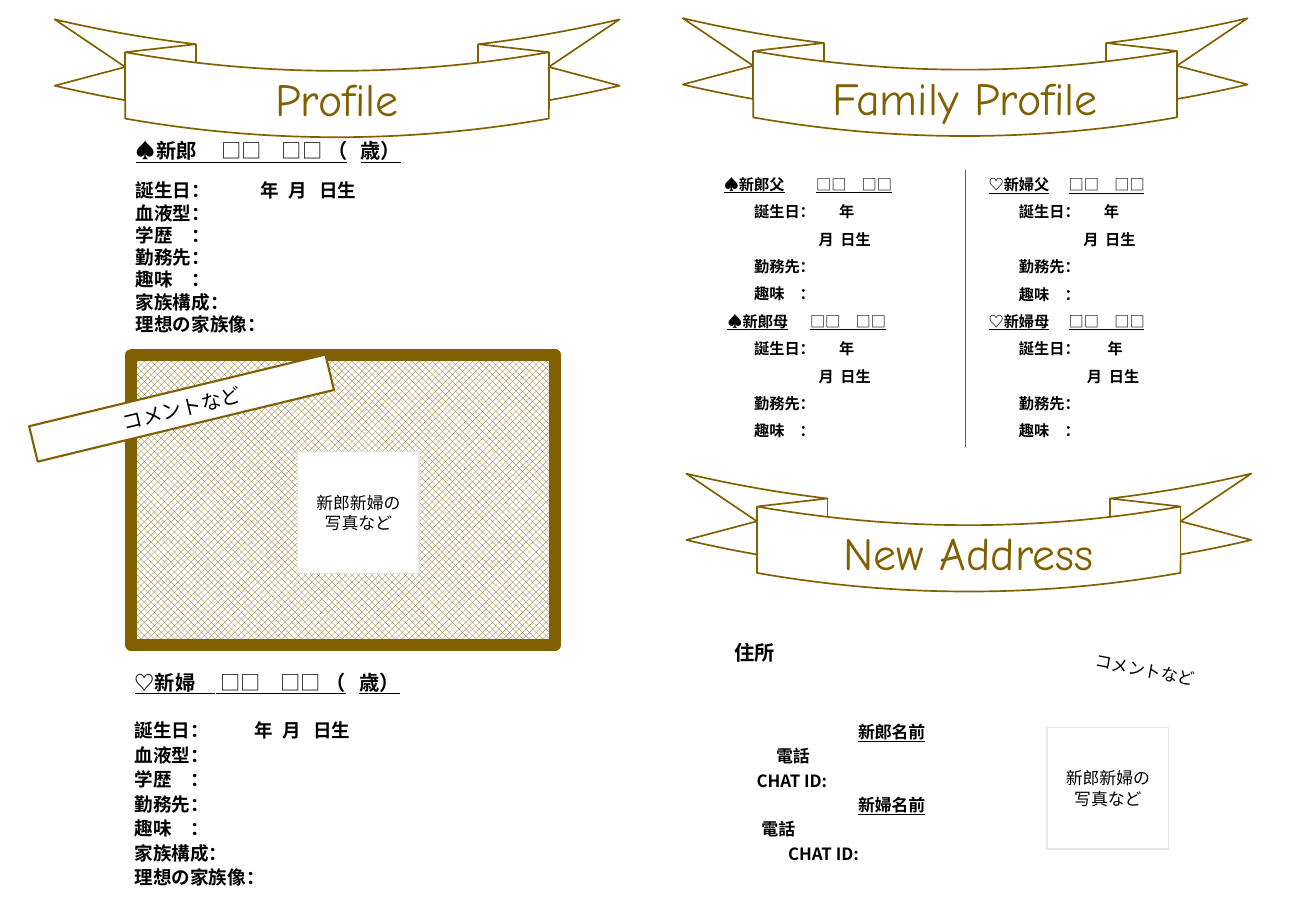
from lxml.etree import SubElement
from pptx import Presentation
from pptx.dml.color import RGBColor
from pptx.enum.dml import MSO_PATTERN
from pptx.enum.shapes import MSO_CONNECTOR, MSO_SHAPE as SHAPE
from pptx.enum.text import MSO_ANCHOR as ANCHOR, PP_ALIGN as ALIGN
from pptx.oxml import parse_xml
from pptx.oxml.ns import nsdecls, qn
from pptx.util import Inches, Pt

GOLD = RGBColor(0x80, 0x60, 0x00)
BLACK = RGBColor(0, 0, 0)
WHITE = RGBColor(0xFF, 0xFF, 0xFF)
PALE = RGBColor(0xE7, 0xE6, 0xE6)
GOTHIC, COMIC, CALIBRI = "Noto Sans CJK JP", "Comic Neue", "Calibri"

# The page is a grid of 130 columns by 90 rows, twelve to the inch
COLS, ROWS = 130, 90


def grid(n):
    return Inches(n / 12)


def place(x, y, w, h):
    return [grid(n) for n in (x, y, w, h)]


def set_tabs(p, stops):
    tabs = "".join(f'<a:tab pos="{Inches(t)}" algn="l"/>' for t in stops)
    tab_list = parse_xml(f'<a:tabLst {nsdecls("a")}>{tabs}</a:tabLst>')
    p._p.pPr.find(qn("a:defRPr")).addprevious(tab_list)


def write(tf, runs, size, font=GOTHIC, color=BLACK, bold=False, align=ALIGN.LEFT,
          spacing=None, before=0, indent=0, tabs=()):
    """Add one paragraph; runs is a text or a list of (text, bold, underline)."""
    p = tf.paragraphs[0]
    if p.runs:
        p = tf.add_paragraph()
    p.alignment = align
    p.line_spacing = spacing or Pt(size * 1.2)
    p.space_before = Pt(before)
    p.font.name, p.font.size, p.font.bold = font, Pt(size), bold
    p.font.color.rgb = color
    SubElement(p._p.pPr.find(qn("a:defRPr")), qn("a:ea"), typeface=font)
    if indent:
        p._p.pPr.set("marL", str(Inches(indent)))
    if tabs:
        set_tabs(p, tabs)
    if isinstance(runs, str):
        runs = [(runs, bold, False)]
    for text, strong, underline in runs:
        r = p.add_run()
        r.text = text
        if strong != bold:
            r.font.bold = strong
        if underline:
            r.font.underline = True


def add_text(s, x, y, w, h, anchor=ANCHOR.TOP):
    sp = s.shapes.add_textbox(*place(x, y, w, h))
    sp.text_frame.word_wrap = True
    sp.text_frame.vertical_anchor = anchor
    return sp


def add_shape(s, kind, x, y, w, h, line, width, fill=None):
    sp = s.shapes.add_shape(kind, *place(x, y, w, h))
    sp.shadow.inherit = False
    sp.line.color.rgb = line
    sp.line.width = Pt(width)
    if fill is None:
        sp.fill.background()
    else:
        sp.fill.solid()
        sp.fill.fore_color.rgb = fill
    return sp


def add_banner(s, x, y, title):
    tf = add_text(s, x + 11.88, y + 5.83, 32.04, 5.28, ANCHOR.MIDDLE).text_frame
    write(tf, title, 27.2, COMIC, GOLD, align=ALIGN.CENTER, spacing=0.7)
    ribbon = add_shape(s, SHAPE.CURVED_DOWN_RIBBON, x, y, 55.8, 11.64, GOLD, 1)
    for i, value in enumerate((0.437, 0.75, 0.281)):
        ribbon.adjustments[i] = value


def add_profile(s, box, person, date_tabs, gap, pitch, anchor):
    tf = add_text(s, *box, anchor).text_frame
    write(tf, [(person + "　", True, True), (" □□　□□ ", False, True),
               ("（\t歳）", True, True)], 12, bold=True, tabs=[1.85])
    write(tf, "誕生日：\t年\t月\t日生", 11, bold=True, spacing=Pt(pitch),
          before=gap, tabs=date_tabs)
    for label in ("血液型：", "学歴　：", "勤務先：", "趣味　：", "家族構成：", "理想の家族像："):
        write(tf, label, 11, bold=True, spacing=Pt(pitch))
    return tf


def add_family(s, box, parents):
    tf = add_text(s, *box).text_frame
    for parent, indent, names_at, shift in parents:
        rows = [
            ([(parent, True, True), ("\t□□　□□", False, True)], [names_at]),
            ("\t誕生日：\t年", [0.25, 0.95 + shift]),
            ("\t月\t日生", [0.78 + shift, 0.96 + shift]),
            ("\t勤務先：", [0.25]),
            ("\t趣味　：", [0.25]),
        ]
        for i, (runs, tabs) in enumerate(rows):
            write(tf, runs, 9, bold=True, spacing=Pt(16.2), tabs=tabs,
                  indent=0 if i else indent)


def add_address(s):
    tf = add_text(s, 71.4, 62.16, 33.36, 27.84).text_frame
    write(tf, "住所", 12, bold=True, spacing=Pt(17.28))
    for name, before, phone_at, chat_at in (("新郎名前", 31.7, 0.34, 0.18),
                                            ("新婦名前", 0, 0.22, 0.44)):
        write(tf, [(name, True, True)], 10, bold=True, align=ALIGN.CENTER,
              spacing=Pt(14.4), before=before)
        for text, indent in (("電話", phone_at), ("CHAT ID:", chat_at)):
            write(tf, text, 10, bold=True, spacing=Pt(14.4), indent=indent)


def add_photo_box(s, x, y, fill=None):
    sp = add_shape(s, SHAPE.RECTANGLE, x, y, 12, 12, PALE, 0.75, fill)
    tf = sp.text_frame
    tf.word_wrap = False
    for text in ("新郎新婦の", "写真など"):
        write(tf, text, 10, COMIC, align=ALIGN.CENTER)


def add_divider(s, x, top, bottom):
    line = s.shapes.add_connector(MSO_CONNECTOR.STRAIGHT, *place(x, top, x, bottom))
    line.line.color.rgb = GOLD
    line.line.width = Pt(0.5)
    SubElement(line._element.spPr, qn("a:effectLst"))


def main():
    prs = Presentation()
    prs.slide_width, prs.slide_height = grid(COLS), grid(ROWS)
    s = prs.slides.add_slide(prs.slide_layouts[6])

    # Left page: the couple and their framed photo
    add_banner(s, 5.4, 1.92, "Profile")
    frame = add_shape(s, SHAPE.RECTANGLE, 12.96, 35.04, 41.88, 28.68, GOLD, 7)
    frame.fill.patterned()
    frame.fill.pattern = MSO_PATTERN.OUTLINED_DIAMOND
    frame.fill.fore_color.rgb = GOLD
    frame.fill.back_color.rgb = WHITE
    groom = add_profile(s, (12.24, 15, 41.28, 18.84), "♠新郎", (1.03, 1.26, 1.51),
                        9.6, 13.2, ANCHOR.MIDDLE)
    groom.margin_bottom = grid(2.6)
    add_profile(s, (12.12, 65.64, 41.28, 22.44), "♡新婦", (0.99, 1.22, 1.47),
                13.2, 14.5, ANCHOR.TOP)
    tape = add_shape(s, SHAPE.RECTANGLE, 2.88, 38.52, 30.12, 3.6, GOLD, 1.25, WHITE)
    tape.rotation = 346.4
    write(tape.text_frame, "コメントなど", 12, CALIBRI, align=ALIGN.CENTER)
    add_photo_box(s, 29.4, 44.64, WHITE)

    # Right page, upper half: the parents
    add_banner(s, 67.44, 1.8, "Family Profile")
    add_divider(s, 95.4, 16.8, 44.16)
    add_family(s, (70.32, 15.84, 27, 28.8),
               (("♠新郎父", 0, 0.76, 0), ("♠新郎母", 0.03, 0.68, 0)))
    add_family(s, (96.48, 15.84, 29.52, 30.96),
               (("♡新婦父", 0, 0.66, 0), ("♡新婦母", 0, 0.66, 0.03)))

    # Right page, lower half: the new address
    add_banner(s, 67.8, 46.8, "New Address")
    comment = add_text(s, 101.64, 64.56, 22.56, 5.28)
    comment.rotation = 10.8
    write(comment.text_frame, "コメントなど", 10, align=ALIGN.CENTER)
    add_address(s)
    add_photo_box(s, 103.44, 71.88)

    prs.save("out.pptx")


if __name__ == "__main__":
    main()
